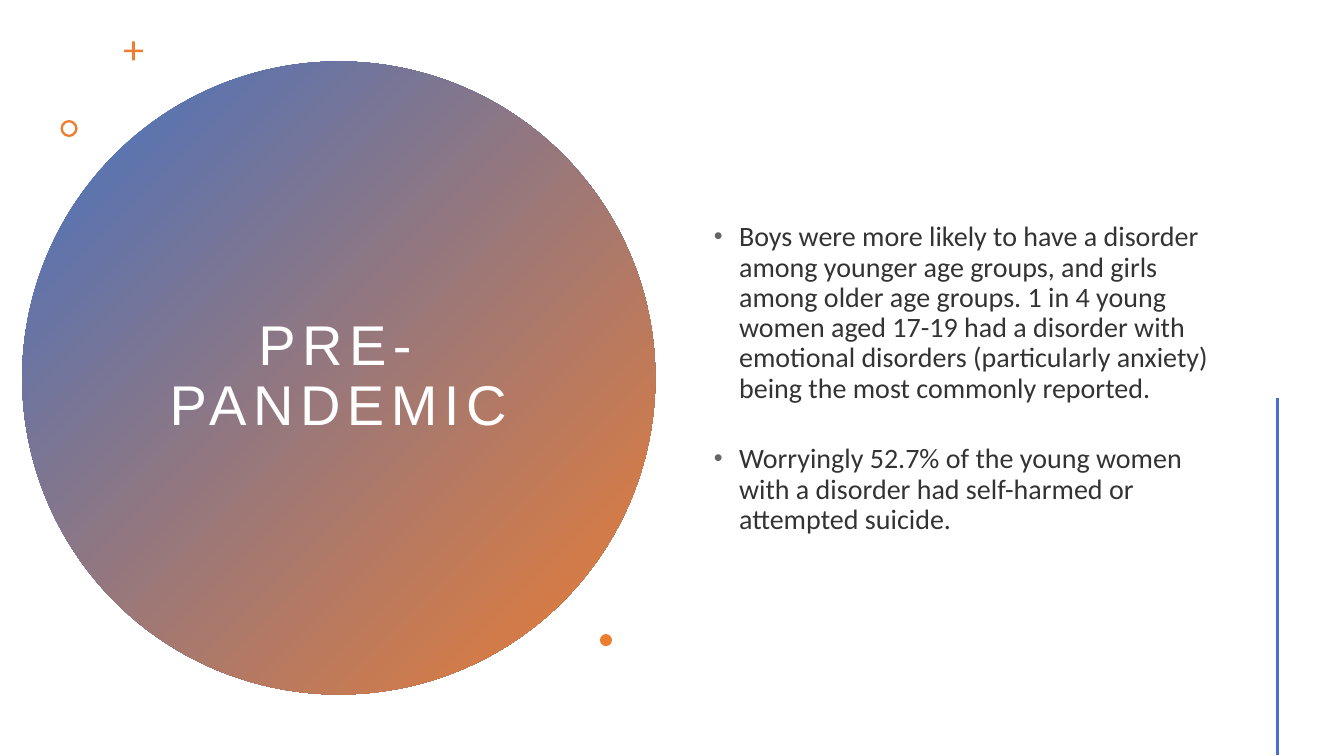
from dataclasses import dataclass

from lxml.etree import SubElement
from pptx import Presentation
from pptx.dml.color import RGBColor
from pptx.enum.shapes import MSO_CONNECTOR as Conn, MSO_SHAPE as Geo
from pptx.enum.text import MSO_ANCHOR as Anchor, MSO_AUTO_SIZE as Fit, PP_ALIGN as Align
from pptx.oxml.ns import qn
from pptx.util import Inches, Pt

BLUE, ORANGE, WHITE, DARK, GREY = "4472C4", "ED7D31", "FFFFFF", "333333", "646464"
POINTS = [
    "Boys were more likely to have a disorder among younger age groups, and girls among "
    "older age groups. 1 in 4 young women aged 17-19 had a disorder with emotional "
    "disorders (particularly anxiety) being the most commonly reported.",
    "Worryingly 52.7% of the young women with a disorder had self-harmed or attempted suicide.",
]


@dataclass
class Mark:
    kind: Geo
    left: float
    top: float
    size: float
    adjust: float | None = None


MARKS = [
    Mark(Geo.CROSS, 1.23, 0.41, 0.19, 0.43),
    Mark(Geo.DONUT, 0.6, 1.19, 0.17, 0.14),
    Mark(Geo.OVAL, 5.95, 6.29, 0.12),
]


def tint(code: str) -> RGBColor:
    return RGBColor.from_string(code)


def apply(item, values: dict) -> None:
    for name, value in values.items():
        setattr(item, name, value)


def place(item, left: float, top: float, width: float, height: float) -> None:
    apply(item, {"left": Inches(left), "top": Inches(top),
                 "width": Inches(width), "height": Inches(height)})


def draw(shapes, mark: Mark):
    """Add a square-framed shape without line or shadow."""
    size = Inches(mark.size)
    shape = shapes.add_shape(mark.kind, Inches(mark.left), Inches(mark.top), size, size)
    shape.shadow.inherit = False
    shape.line.fill.background()
    shape.fill.solid()
    shape.fill.fore_color.rgb = tint(ORANGE)
    if mark.adjust is not None:
        shape.adjustments[0] = mark.adjust
    return shape


def write(para, text: str, face: dict, layout: dict, color: str):
    run = para.add_run()
    run.text = text
    apply(run.font, face)
    run.font.color.rgb = tint(color)
    apply(para, layout)
    return run


def bullet(para) -> None:
    props = para._p.get_or_add_pPr()
    props.set("marL", str(Inches(0.34)))
    props.set("indent", str(Inches(-0.25)))
    SubElement(SubElement(props, qn("a:buClr")), qn("a:srgbClr"), val=GREY)
    SubElement(props, qn("a:buSzPct"), val="90000")
    SubElement(props, qn("a:buFont"), typeface="Arial")
    SubElement(props, qn("a:buChar"), char="•")


def main() -> None:
    deck = Presentation()
    apply(deck, {"slide_width": Inches(13.33), "slide_height": Inches(7.5)})
    slide = deck.slides.add_slide(deck.slide_layouts[1])
    shapes = slide.shapes
    title, body = shapes.title, slide.placeholders[1]
    frame = {"vertical_anchor": Anchor.MIDDLE, "word_wrap": True, "auto_size": Fit.NONE}

    # Gradient disc, behind the title
    disc = draw(shapes, Mark(Geo.OVAL, 0.22, 0.61, 6.28))
    disc.fill.gradient()
    disc.fill.gradient_angle = 315
    for stop, color, spot in zip(disc.fill.gradient_stops, (BLUE, ORANGE), (0, 1)):
        stop.color.rgb = tint(color)
        stop.position = spot
    title._element.addprevious(disc._element)

    # Title
    place(title, 1.36, 1.41, 3.99, 4.67)
    apply(title.text_frame, frame)
    run = write(title.text_frame.paragraphs[0], "PRE-PANDEMIC",
                {"size": Pt(40), "name": "Arial"},
                {"alignment": Align.CENTER, "line_spacing": 0.9}, WHITE)
    run.font._element.set("spc", "470")

    # Bullet list
    place(body, 6.89, 0.57, 5.22, 6.38)
    apply(body.text_frame, frame)
    for i, text in enumerate(POINTS):
        para = body.text_frame.add_paragraph() if i else body.text_frame.paragraphs[0]
        write(para, text, {"size": Pt(20), "name": "Calibri"},
              {"line_spacing": 0.9, "space_before": Pt(29)}, DARK)
        bullet(para)

    # Small accents
    for mark in MARKS:
        draw(shapes, mark)

    # Rule at the right edge
    rule = shapes.add_connector(Conn.STRAIGHT, Inches(12.67), Inches(3.95),
                                Inches(12.67), Inches(7.49))
    rule.line.color.rgb = tint(BLUE)
    rule.line.width = Pt(2)
    SubElement(rule._element.spPr, qn("a:effectLst"))

    deck.save("out.pptx")


if __name__ == "__main__":
    main()
